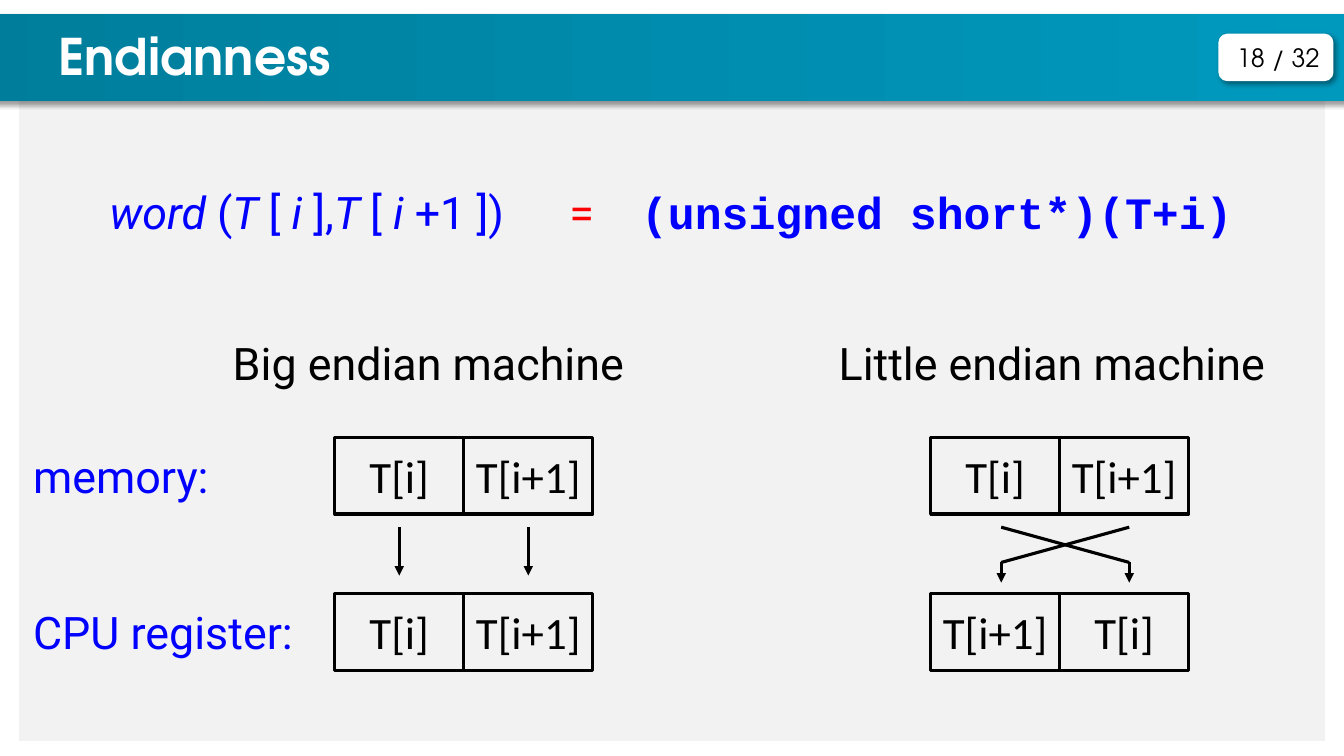
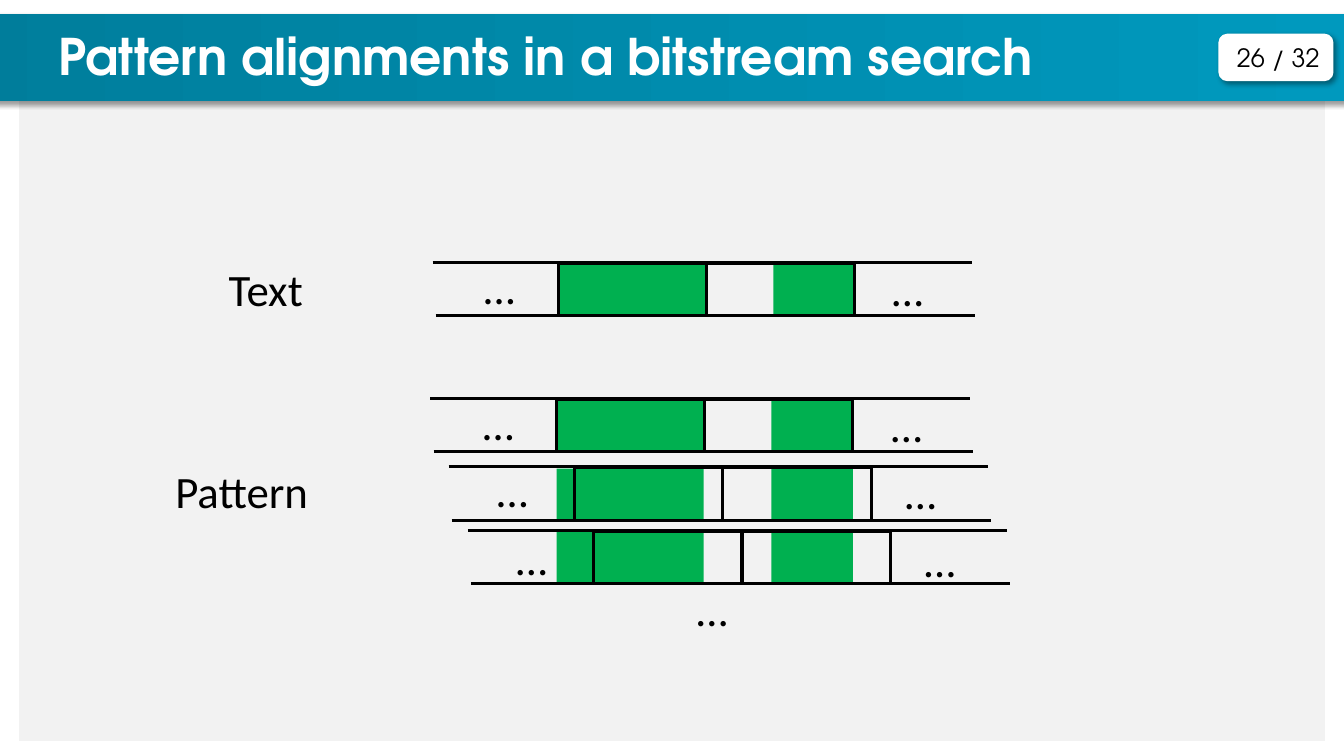
from lxml import etree
from pptx import Presentation
from pptx import util as u
from pptx.dml.color import RGBColor
from pptx.enum import shapes, text
from pptx.oxml.ns import nsdecls, qn
from pptx.oxml import parse_xml

PX = 9144
COLORS = {
    "ink": "000000", "paper": "FFFFFF", "panel": "F2F2F2", "formula": "0000FF",
    "equals": "FF0000", "match": "00B050", "band_right": "009BC0", "band_left": "007D9B",
}
BODY, DIAGRAM, HEADING, CODE = "Roboto", "Calibri", "TeX Gyre Adventor", "Courier New"
STROKE = u.Pt(2.25)
TOTAL_PAGES = 32
CELL_W, CELL_H = 128, 76
FRAME_W, FRAME_H = 147, 52


def px(*lengths):
    """Turn whole px into EMU."""
    return [u.Emu(length * PX) for length in lengths]


def rgb(name):
    """Look up a colour by its role."""
    return RGBColor.from_string(COLORS[name])


def drop_shadow():
    """Build the soft diagonal shadow of the header parts."""
    return parse_xml(
        f'<a:effectLst {nsdecls("a")}><a:outerShdw blurRad="50800" dist="38100" '
        'dir="2700000" algn="tl" rotWithShape="0"><a:srgbClr val="000000">'
        '<a:alpha val="40000"/></a:srgbClr></a:outerShdw></a:effectLst>')


def write(frame, content, font=DIAGRAM, size=32, color="ink", bold=False,
          align=text.PP_ALIGN.LEFT, anchor=text.MSO_ANCHOR.TOP, shadow=False):
    """Fill a text frame; words between underscores are italic."""
    frame.word_wrap = True
    frame.auto_size = text.MSO_AUTO_SIZE.NONE
    frame.vertical_anchor = anchor
    paragraph = frame.paragraphs[0]
    paragraph.alignment = align
    for index, words in enumerate(content.split("_")):
        if not words:
            continue
        run = paragraph.add_run()
        run.text = words
        run.font.name, run.font.size = font, u.Pt(size)
        run.font.bold, run.font.italic = bold, index % 2 == 1
        run.font.color.rgb = rgb(color)
        if shadow:
            run.font.fill
            run.font._element.find(qn("a:solidFill")).addnext(drop_shadow())


def label(slide, x, y, width, content, height=64, **style):
    """Place a text box."""
    write(slide.shapes.add_textbox(*px(x, y, width, height)).text_frame, content, **style)


def box(slide, x, y, width, height, fill=None, line=None, kind=shapes.MSO_SHAPE.RECTANGLE):
    """Draw a shape with optional fill and outline."""
    shape = slide.shapes.add_shape(kind, *px(x, y, width, height))
    shape.shadow.inherit = False
    if fill:
        shape.fill.solid()
        shape.fill.fore_color.rgb = rgb(fill)
    else:
        shape.fill.background()
    if line:
        shape.line.color.rgb = rgb(line)
        shape.line.width = STROKE
    else:
        shape.line.fill.background()
    return shape


def stroke(slide, x1, y1, x2, y2, arrow=False):
    """Draw a straight line, with an arrowhead at its end if asked."""
    line = slide.shapes.add_connector(shapes.MSO_CONNECTOR.STRAIGHT, *px(x1, y1, x2, y2))
    line.line.color.rgb = rgb("ink")
    line.line.width = STROKE
    properties = line.element.spPr
    if arrow:
        etree.SubElement(properties.find(qn("a:ln")), qn("a:tailEnd"), type="triangle")
    etree.SubElement(properties, qn("a:effectLst"))


def cast_shadow(shape):
    """Give a shape the header shadow."""
    properties = shape.element.spPr
    properties.replace(properties.find(qn("a:effectLst")), drop_shadow())


def dress_layout(layout, slide):
    """Move panel, header band and page badge into the layout."""
    panel = box(slide, 19, 84, 1295, 651, fill="panel")
    band = box(slide, -51, 14, 1471, 86, fill="band_right")
    band.fill.gradient()
    band.fill.gradient_angle = 180
    for stop, name in zip(band.fill.gradient_stops, ("band_right", "band_left")):
        stop.color.rgb = rgb(name)
    badge = box(slide, 1210, 35, 111, 44, fill="paper", line="paper",
                kind=shapes.MSO_SHAPE.ROUNDED_RECTANGLE)
    cast_shadow(band)
    cast_shadow(badge)
    for part in (panel, band, badge):
        layout.shapes.element.append(part.element)


def add_page(deck, layout, title, page):
    """Add a slide with its title and page number."""
    slide = deck.slides.add_slide(layout)
    heading = slide.shapes.title
    heading.left, heading.top, heading.width, heading.height = px(48, 20, 1150, 71)
    write(heading.text_frame, title, font=HEADING, size=36, color="paper", bold=True,
          shadow=True)
    label(slide, 1217, 37, 124, f"{page} / {TOTAL_PAGES}", height=40, font=HEADING, size=18)
    return slide


def cell_pair(slide, x, y, names):
    """Draw two adjacent byte cells."""
    for column, name in enumerate(names):
        cell = box(slide, x + column * CELL_W, y, CELL_W, CELL_H, line="ink")
        write(cell.text_frame, name, align=text.PP_ALIGN.CENTER,
              anchor=text.MSO_ANCHOR.MIDDLE)


def endianness(slide):
    """Compare byte order on both machine types."""
    label(slide, 99, 178, 450, "_word _(_T _[ _i_ ],_T _[ _i _+1 ])",
          font=BODY, color="formula")
    label(slide, 555, 178, 60, "=", font=BODY, color="equals")
    label(slide, 626, 178, 640, "(unsigned short*)(T+i)", font=CODE, color="formula", bold=True)
    memory_y, register_y = 434, 589
    low, high = "T[i]", "T[i+1]"
    machines = [("Big endian machine", 221, 332, (low, high)),
                ("Little endian machine", 822, 923, (high, low))]
    for name, name_x, cells_x, register in machines:
        label(slide, name_x, 328, 480, name, font=BODY)
        cell_pair(slide, cells_x, memory_y, (low, high))
        cell_pair(slide, cells_x, register_y, register)
    for name, y in (("memory:", memory_y), ("CPU register:", register_y)):
        label(slide, 23, y + 6, 300, name, font=BODY, color="formula")
    for x in (396, 524):
        stroke(slide, x, 523, x, 571, arrow=True)
    left, right = 993, 1120
    for start, end in ((left, right), (right, left)):
        stroke(slide, start, 523, end, 558)
        stroke(slide, end, 558, end, 578, arrow=True)


def bit_row(slide, x, y, match_x, dots_x, dots_y):
    """Draw one stream: matched bits, two word frames, rails and dots."""
    for offset, width in ((0, 146), (213, 81)):
        box(slide, match_x + offset, y + 1, width, 50, fill="match")
    for column in range(2):
        box(slide, x + column * FRAME_W, y, FRAME_W, FRAME_H, line="ink")
    for rail_x, rail_y in ((x - 125, y - 1), (x - 122, y + FRAME_H)):
        stroke(slide, rail_x, rail_y, rail_x + 535, rail_y)
    label(slide, dots_x, dots_y, 51, "…")
    label(slide, dots_x + 405, dots_y + 2, 51, "…")


def alignments(slide):
    """Show the pattern shifted against the text."""
    label(slide, 217, 255, 120, "Text")
    label(slide, 164, 455, 180, "Pattern")
    rows = [(554, 261, 554, 470, 253), (552, 396, 552, 469, 388),
            (570, 464, 552, 483, 454), (589, 527, 552, 502, 522)]
    for row in rows:
        bit_row(slide, *row)
    label(slide, 681, 572, 51, "…")


def main():
    """Build and save the deck."""
    deck = Presentation()
    deck.slide_width, deck.slide_height = px(1333, 750)
    layout = deck.slide_layouts[5]
    first = add_page(deck, layout, "Endianness", 18)
    dress_layout(layout, first)
    endianness(first)
    alignments(add_page(deck, layout, "Pattern alignments in a bitstream search", 26))
    deck.save("out.pptx")


if __name__ == "__main__":
    main()
